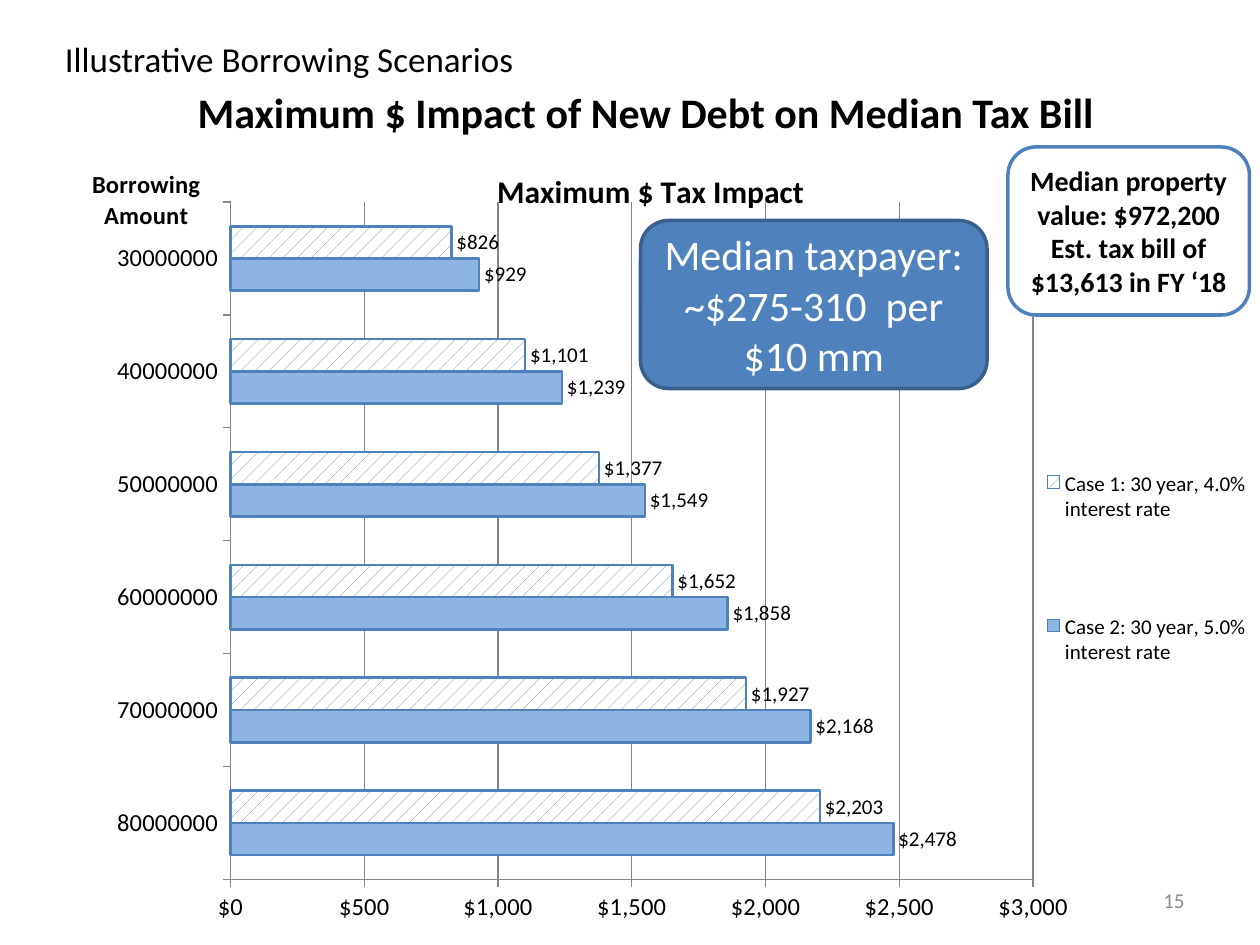
"""Build a slide showing the tax impact of borrowing scenarios."""
from dataclasses import dataclass

import lxml.etree
import pptx
import pptx.chart.data
import pptx.dml.color
import pptx.enum.chart
import pptx.enum.dml
import pptx.enum.shapes
import pptx.enum.text
import pptx.oxml.ns
import pptx.util

Pt = pptx.util.Pt
ALIGN = pptx.enum.text.PP_ALIGN
ANCHOR = pptx.enum.text.MSO_ANCHOR


@dataclass(frozen=True)
class Theme:
    font: str = "Calibri"
    black: str = "000000"
    white: str = "FFFFFF"
    blue: str = "4F81BD"
    dark_blue: str = "3A5F8C"
    light_blue: str = "8EB4E3"
    grid: str = "868686"
    muted: str = "8C8C8C"
    title: int = 24
    heading: int = 20
    chart_title: int = 18
    note: int = 16
    axis: int = 14
    small: int = 12


THEME = Theme()
DOLLARS = '"$"#,##0'
AMOUNTS = [amount * 10_000_000 for amount in range(8, 2, -1)]
CASES = {
    "Case 2: 30 year, 5.0% interest rate": (2478, 2168, 1858, 1549, 1239, 929),
    "Case 1: 30 year, 4.0% interest rate": (2203, 1927, 1652, 1377, 1101, 826),
}


def rgb(value):
    return pptx.dml.color.RGBColor.from_string(value)


def style_font(font, size, color=THEME.black, bold=False):
    font.name = THEME.font
    font.size = Pt(size)
    font.bold = bold
    font.color.rgb = rgb(color)


def write(frame, text, size, color=THEME.black, bold=False, align=ALIGN.CENTER):
    frame.text = text
    for paragraph in frame.paragraphs:
        paragraph.alignment = align
        for run in paragraph.runs:
            style_font(run.font, size, color, bold)


def place(shape, left, top, width, height):
    shape.left, shape.top, shape.width, shape.height = map(Pt, (left, top, width, height))


def add_text(slide, box, text, anchor, **text_format):
    frame = slide.shapes.add_textbox(*map(Pt, box)).text_frame
    frame.word_wrap = True
    frame.vertical_anchor = anchor
    write(frame, text, **text_format)
    return frame


def add_callout(slide, box, text, fill, line, **text_format):
    kind = pptx.enum.shapes.MSO_SHAPE.ROUNDED_RECTANGLE
    shape = slide.shapes.add_shape(kind, *map(Pt, box))
    shape.shadow.inherit = False
    shape.fill.solid()
    shape.fill.fore_color.rgb = rgb(fill)
    shape.line.color.rgb = rgb(line)
    shape.line.width = Pt(2)
    shape.text_frame.word_wrap = True
    shape.text_frame.vertical_anchor = ANCHOR.MIDDLE
    write(shape.text_frame, text, **text_format)


def set_layout(element, index, **values):
    """Position a chart part by fractions of the chart area."""
    qn = pptx.oxml.ns.qn
    for old in element.findall(qn("c:layout")):
        element.remove(old)
    layout = lxml.etree.Element(qn("c:layout"))
    manual = lxml.etree.SubElement(layout, qn("c:manualLayout"))
    settings = {"xMode": "edge", "yMode": "edge", **values}
    if index == 0:
        settings = {"layoutTarget": "inner", **settings}
    for name, value in settings.items():
        lxml.etree.SubElement(manual, qn(f"c:{name}")).set("val", str(value))
    element.insert(index, layout)


def format_series(series):
    series.invert_if_negative = False
    series.format.line.color.rgb = rgb(THEME.blue)
    series.format.line.width = Pt(1.5)
    labels = series.data_labels
    labels.show_value = True
    labels.position = pptx.enum.chart.XL_LABEL_POSITION.OUTSIDE_END
    labels.number_format = DOLLARS
    labels.number_format_is_linked = False
    style_font(labels.font, THEME.small)


def format_axis(axis, number_format):
    axis.major_tick_mark = pptx.enum.chart.XL_TICK_MARK.OUTSIDE
    axis.format.line.color.rgb = rgb(THEME.grid)
    axis.tick_labels.number_format = number_format
    axis.tick_labels.number_format_is_linked = False
    style_font(axis.tick_labels.font, THEME.axis)


def format_axes(chart):
    category_axis, value_axis = chart.category_axis, chart.value_axis
    format_axis(category_axis, "#,##0")
    format_axis(value_axis, DOLLARS)
    category_axis.has_major_gridlines = False
    value_axis.minimum_scale, value_axis.maximum_scale = 0, 3000
    value_axis.major_unit = 500
    value_axis.has_major_gridlines = True
    value_axis.major_gridlines.format.line.color.rgb = rgb(THEME.grid)
    title = category_axis.axis_title
    write(title.text_frame, "Borrowing\nAmount", size=THEME.axis, bold=True)
    body = title.text_frame._txBody.bodyPr
    body.set("rot", "0")
    body.set("vert", "horz")
    set_layout(title._element, 1, x=0.07, y=0.12)


def add_impact_chart(slide):
    data = pptx.chart.data.CategoryChartData(number_format="#,##0")
    data.categories = AMOUNTS
    for name, values in CASES.items():
        data.add_series(name, values)
    kind = pptx.enum.chart.XL_CHART_TYPE.BAR_CLUSTERED
    frame = slide.shapes.add_chart(kind, *map(Pt, (0, 30, 720, 531)), data)
    slide.shapes._spTree.insert(2, frame._element)
    chart = frame.chart
    style_font(chart.font, 10)
    plot = chart.plots[0]
    plot.gap_width, plot.overlap = 150, 0
    plot.vary_by_categories = False
    for series in plot.series:
        format_series(series)
    solid, hatched = (series.format.fill for series in plot.series)
    solid.solid()
    solid.fore_color.rgb = rgb(THEME.light_blue)
    hatched.patterned()
    hatched.pattern = pptx.enum.dml.MSO_PATTERN.PERCENT_10
    hatched.fore_color.rgb = rgb(THEME.blue)
    hatched.back_color.rgb = rgb(THEME.white)
    format_axes(chart)
    write(chart.chart_title.text_frame, "Maximum $ Tax Impact", size=THEME.chart_title, bold=True)
    set_layout(chart.chart_title._element, 1, x=0.39, y=0.12)
    chart.has_legend = True
    chart.legend.position = pptx.enum.chart.XL_LEGEND_POSITION.RIGHT
    chart.legend.include_in_layout = False
    style_font(chart.legend.font, THEME.small)
    set_layout(chart.legend._element, 1, x=0.82, y=0.35, w=0.18, h=0.41)
    set_layout(chart._chartSpace.chart.plotArea, 0, x=0.183, y=0.161, w=0.637, h=0.729)


def main():
    presentation = pptx.Presentation()
    presentation.slide_width, presentation.slide_height = Pt(720), Pt(540)
    slide = presentation.slides.add_slide(presentation.slide_layouts[5])
    title = slide.shapes.title
    place(title, 66, 27, 606, 74)
    title.text_frame.vertical_anchor = ANCHOR.MIDDLE
    write(title.text_frame, "Maximum $ Impact of New Debt on Median Tax Bill",
          size=THEME.title, bold=True)
    add_impact_chart(slide)
    add_text(slide, (516, 500, 168, 29), "15", ANCHOR.MIDDLE,
             size=THEME.small, color=THEME.muted, align=ALIGN.RIGHT)
    add_text(slide, (30, 18, 414, 114), "Illustrative Borrowing Scenarios", ANCHOR.TOP,
             size=THEME.heading, align=ALIGN.LEFT)
    add_callout(slide, (576, 84, 138, 96),
                "Median property value: $972,200 Est. tax bill of $13,613 in FY ‘18",
                THEME.white, THEME.blue, size=THEME.note, bold=True)
    add_callout(slide, (366, 126, 198, 96), "Median taxpayer: ~$275-310  per $10 mm",
                THEME.blue, THEME.dark_blue, size=THEME.title, color=THEME.white)
    presentation.save("out.pptx")


if __name__ == "__main__":
    main()
